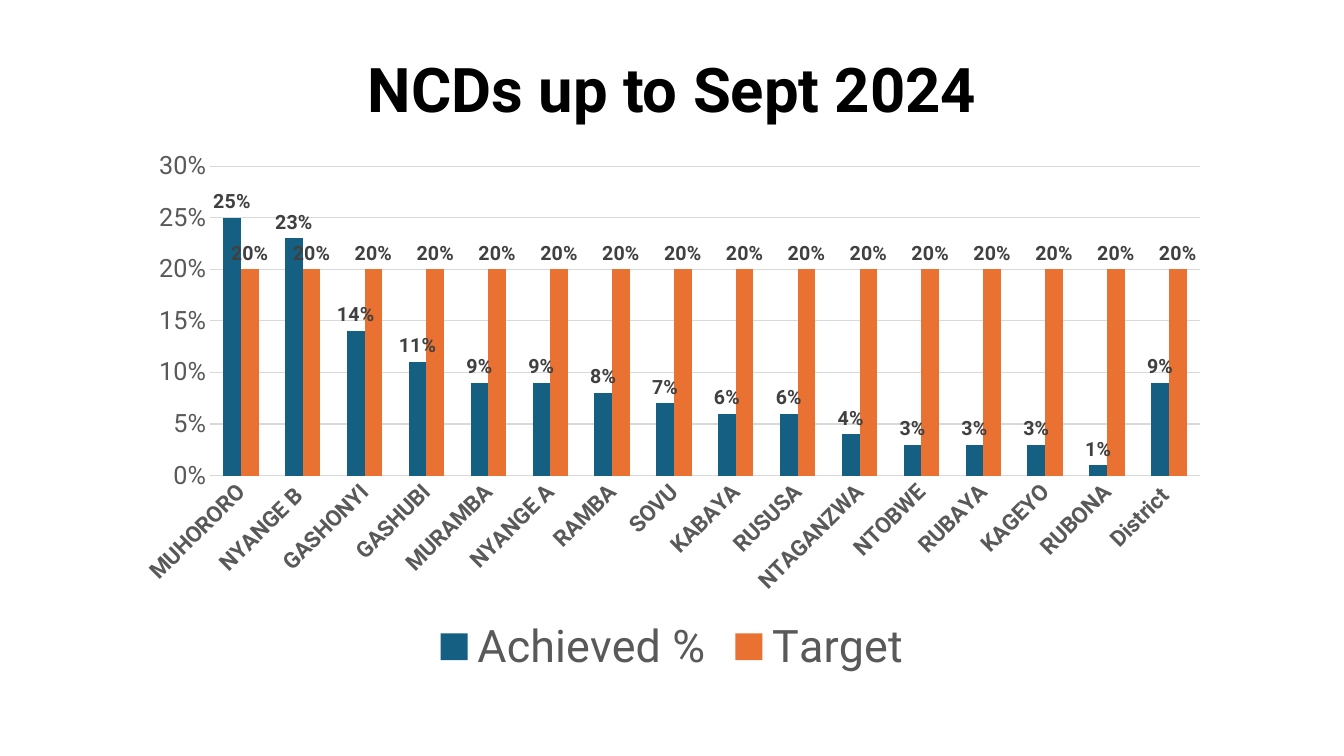
import pptx
import pptx.chart.data
import pptx.dml.color
import pptx.enum.chart
import pptx.enum.text
import pptx.util
from lxml import etree
from pptx.oxml import parse_xml
from pptx.oxml.ns import nsdecls, qn

PX = 914400 / 100.8
FONT = "Roboto"
ACHIEVED = {
    "MUHORORO": 0.25, "NYANGE B ": 0.23, "GASHONYI": 0.14, "GASHUBI": 0.11,
    "MURAMBA": 0.09, "NYANGE A": 0.09, "RAMBA": 0.08, "SOVU": 0.07,
    "KABAYA": 0.06, "RUSUSA": 0.06, "NTAGANZWA": 0.04, "NTOBWE": 0.03,
    "RUBAYA": 0.03, "KAGEYO": 0.03, "RUBONA": 0.01, "District ": 0.09,
}
TARGET = 0.2
CHART_BOX = (122, 139, 1100, 543)
PLOT_BOX = (210, 164, 990, 311)


def px(*lengths):
    return [pptx.util.Emu(round(n * PX)) for n in lengths]


def color(hex_code):
    return pptx.dml.color.RGBColor.from_string(hex_code)


def style_font(font, size, hex_code, bold=False):
    font.name = FONT
    font.size = pptx.util.Pt(size)
    font.bold = bold
    font.color.rgb = color(hex_code)


def add_title(s, text, box):
    tf = s.shapes.add_textbox(*px(*box)).text_frame
    tf.word_wrap = True
    tf.vertical_anchor = pptx.enum.text.MSO_ANCHOR.MIDDLE
    p = tf.paragraphs[0]
    p.text = text
    p.alignment = pptx.enum.text.PP_ALIGN.CENTER
    p.line_spacing = 0.9
    style_font(p.runs[0].font, 44, "000000", bold=True)


def place_plot(chart):
    """Fix the inner plot area as fractions of the chart frame."""
    left, top, width, height = CHART_BOX
    x, y, w, h = PLOT_BOX
    fractions = {"x": (x - left) / width, "y": (y - top) / height,
                 "w": w / width, "h": h / height}
    layout = parse_xml(
        f'<c:layout {nsdecls("c")}><c:manualLayout><c:layoutTarget val="inner"/>'
        '<c:xMode val="edge"/><c:yMode val="edge"/></c:manualLayout></c:layout>')
    for name, value in fractions.items():
        etree.SubElement(layout[0], qn(f"c:{name}")).set("val", f"{value:.2f}")
    plot_area = chart.element.find(".//" + qn("c:plotArea"))
    for old in plot_area.findall(qn("c:layout")):
        plot_area.remove(old)
    plot_area.insert(0, layout)


def style_axes(chart):
    for axis, size, bold in ((chart.category_axis, 16, True),
                             (chart.value_axis, 18, False)):
        axis.major_tick_mark = pptx.enum.chart.XL_TICK_MARK.NONE
        axis.minor_tick_mark = pptx.enum.chart.XL_TICK_MARK.NONE
        axis.format.line.fill.background()
        style_font(axis.tick_labels.font, size, "595959", bold)
    # Slanted category names
    category_xml = chart.element.find(".//" + qn("c:catAx"))
    body = category_xml.find(".//" + qn("a:bodyPr"))
    body.set("rot", "-2700000")
    body.set("vert", "horz")

    values = chart.value_axis
    values.minimum_scale, values.maximum_scale, values.major_unit = 0, 0.3, 0.05
    values.tick_labels.number_format = "0%"
    values.tick_labels.number_format_is_linked = False
    values.has_major_gridlines = True
    grid = values.major_gridlines.format.line
    grid.color.rgb = color("D9D9D9")
    grid.width = pptx.util.Pt(0.75)


def style_series(series, hex_code):
    series.format.fill.solid()
    series.format.fill.fore_color.rgb = color(hex_code)
    series.invert_if_negative = False
    labels = series.data_labels
    labels.show_value = True
    labels.number_format = "0%"
    labels.number_format_is_linked = False
    labels.position = pptx.enum.chart.XL_LABEL_POSITION.OUTSIDE_END
    style_font(labels.font, 14, "404040", bold=True)


def add_column_chart(s):
    data = pptx.chart.data.CategoryChartData(number_format="0%")
    data.categories = list(ACHIEVED)
    data.add_series("Achieved %", list(ACHIEVED.values()))
    data.add_series("Target", [TARGET] * len(ACHIEVED))
    chart = s.shapes.add_chart(pptx.enum.chart.XL_CHART_TYPE.COLUMN_CLUSTERED,
                               *px(*CHART_BOX), data).chart
    style_font(chart.font, 10, "000000")
    chart.has_title = False
    plot = chart.plots[0]
    plot.gap_width = 150
    plot.overlap = 0
    plot.vary_by_categories = False
    for series, hex_code in zip(plot.series, ("156082", "E97132")):
        style_series(series, hex_code)
    style_axes(chart)
    place_plot(chart)

    # Legend
    chart.has_legend = True
    chart.legend.position = pptx.enum.chart.XL_LEGEND_POSITION.BOTTOM
    chart.legend.include_in_layout = False
    style_font(chart.legend.font, 32, "595959")


def main():
    prs = pptx.Presentation()
    prs.slide_width, prs.slide_height = px(1344, 756)
    s = prs.slides.add_slide(prs.slide_layouts[6])
    add_title(s, "NCDs up to Sept 2024", (93, 40, 1159, 106))
    add_column_chart(s)
    prs.save("out.pptx")


if __name__ == "__main__":
    main()
